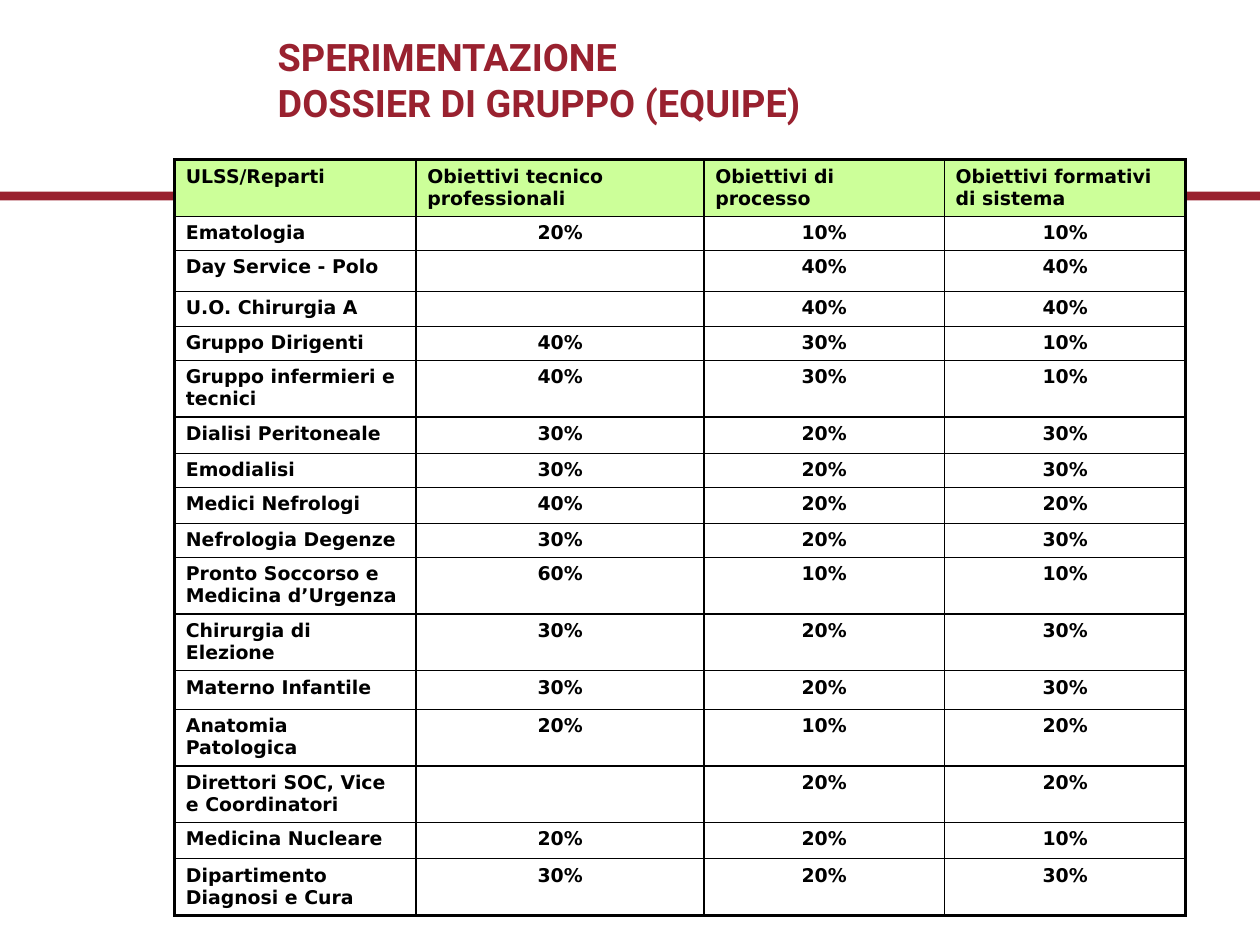
"""Build the slide on group dossiers with its table of objectives by ward."""
from lxml.etree import SubElement
from pptx import Presentation
from pptx.dml.color import RGBColor
from pptx.enum.shapes import MSO_SHAPE
from pptx.enum.text import MSO_ANCHOR, MSO_AUTO_SIZE, PP_ALIGN
from pptx.oxml.ns import qn
from pptx.util import Cm, Pt

TITLE = "SPERIMENTAZIONE\vDOSSIER DI GRUPPO (EQUIPE)"
HEADERS = ("ULSS/Reparti", "Obiettivi tecnico professionali",
           "Obiettivi di processo", "Obiettivi formativi di sistema")
WARDS = (
    ("Ematologia", "20%", "10%", "10%"),
    ("Day Service - Polo", "", "40%", "40%"),
    ("U.O. Chirurgia A", "", "40%", "40%"),
    ("Gruppo Dirigenti", "40%", "30%", "10%"),
    ("Gruppo infermieri e tecnici", "40%", "30%", "10%"),
    ("Dialisi Peritoneale", "30%", "20%", "30%"),
    ("Emodialisi", "30%", "20%", "30%"),
    ("Medici Nefrologi", "40%", "20%", "20%"),
    ("Nefrologia Degenze", "30%", "20%", "30%"),
    ("Pronto Soccorso e Medicina d’Urgenza", "60%", "10%", "10%"),
    ("Chirurgia di Elezione", "30%", "20%", "30%"),
    ("Materno Infantile", "30%", "20%", "30%"),
    ("Anatomia Patologica", "20%", "10%", "20%"),
    ("Direttori SOC, Vice e Coordinatori", "", "20%", "20%"),
    ("Medicina Nucleare", "20%", "20%", "10%"),
    ("Dipartimento Diagnosi e Cura", "30%", "20%", "30%"),
)
COLUMN_WIDTHS = (5.41, 6.45, 5.38, 5.41)
ROW_HEIGHTS = (1.27, 0.76, 0.91, 0.79, 0.76, 1.27, 0.81, 0.76, 0.81,
               0.76, 1.27, 1.27, 0.86, 1.27, 1.27, 0.81, 1.27)

BURGUNDY = RGBColor(0x99, 0x21, 0x2F)
LIME = RGBColor(0xCC, 0xFF, 0x99)
BLACK = RGBColor(0, 0, 0)
OUTER, INNER = Pt(2.25), Pt(1)
LEFT, CENTER = PP_ALIGN.LEFT, PP_ALIGN.CENTER
MIDDLE = MSO_ANCHOR.MIDDLE
NO_AUTOFIT = MSO_AUTO_SIZE.NONE
RECTANGLE = MSO_SHAPE.RECTANGLE
TITLE_ONLY = 5


def write_text(text_frame, text, *, font, size, color, align=LEFT):
    text_frame.text = text
    paragraph = text_frame.paragraphs[0]
    paragraph.alignment = align
    for run in paragraph.runs:
        run.font.name = font
        run.font.size = Pt(size)
        run.font.bold = True
        run.font.color.rgb = color
    if not text:
        SubElement(paragraph._p, qn("a:endParaRPr"), sz=str(size * 100))


def draw_borders(cell, widths):
    properties = cell._tc.get_or_add_tcPr()
    for side, width in zip("LRTB", widths):
        line = SubElement(properties, qn(f"a:ln{side}"), w=str(width))
        fill = SubElement(line, qn("a:solidFill"))
        SubElement(fill, qn("a:srgbClr"), val=str(BLACK))


def add_band(slide, width):
    band = slide.shapes.add_shape(RECTANGLE, 0, Cm(4.29), width, Cm(0.2))
    band.shadow.inherit = False
    band.fill.solid()
    band.fill.fore_color.rgb = BURGUNDY
    band.line.fill.background()


def add_title(slide):
    title = slide.shapes.title
    title.left, title.top = Cm(6.12), Cm(0.58)
    title.width, title.height = Cm(15.01), Cm(2.39)
    frame = title.text_frame
    frame.word_wrap = True
    frame.auto_size = NO_AUTOFIT
    frame.vertical_anchor = MIDDLE
    frame.margin_left = frame.margin_right = Cm(0.1)
    frame.margin_top = frame.margin_bottom = Cm(0.1)
    write_text(frame, TITLE, font="Roboto", size=24, color=BURGUNDY)


def add_objectives(slide):
    rows = (HEADERS, *WARDS)
    last_row, last_column = len(rows) - 1, len(HEADERS) - 1
    table = slide.shapes.add_table(
        len(rows), len(HEADERS), Cm(3.91), Cm(3.58),
        Cm(sum(COLUMN_WIDTHS)), Cm(sum(ROW_HEIGHTS))).table
    table.first_row = table.horz_banding = False
    for column, width in zip(table.columns, COLUMN_WIDTHS):
        column.width = Cm(width)
    for row, height in zip(table.rows, ROW_HEIGHTS):
        row.height = Cm(height)
    for r, values in enumerate(rows):
        for c, value in enumerate(values):
            cell = table.cell(r, c)
            write_text(cell.text_frame, value, font="DejaVu Sans", size=12,
                       color=BLACK, align=CENTER if r and c else LEFT)
            on_edge = (c == 0, c == last_column, r == 0, r == last_row)
            draw_borders(cell, [OUTER if edge else INNER for edge in on_edge])
            if r == 0:
                cell.fill.solid()
                cell.fill.fore_color.rgb = LIME
            else:
                cell.fill.background()


def main():
    presentation = Presentation()
    presentation.slide_width = Cm(28.22)
    presentation.slide_height = Cm(21.16)
    layout = presentation.slide_layouts[TITLE_ONLY]
    slide = presentation.slides.add_slide(layout)
    add_band(slide, presentation.slide_width)
    add_title(slide)
    add_objectives(slide)
    presentation.save("out.pptx")


if __name__ == "__main__":
    main()
